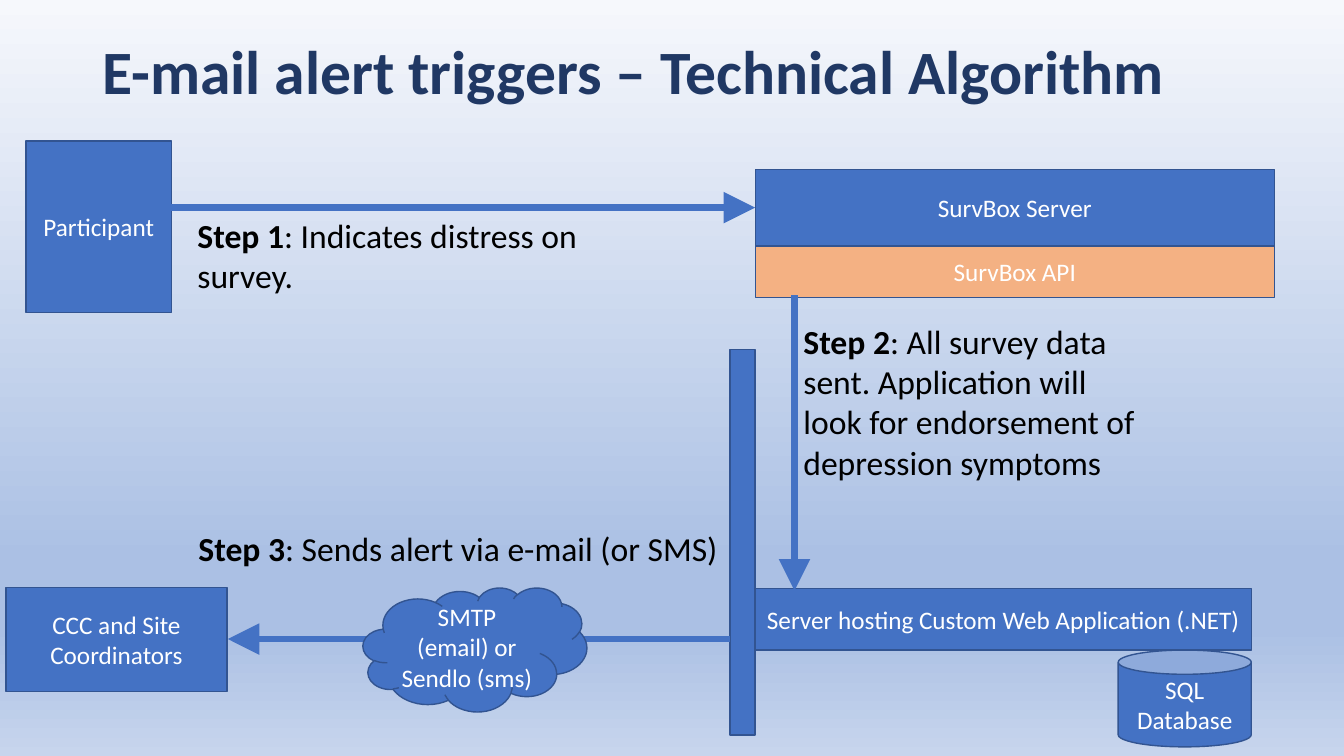
from lxml.etree import SubElement
from pptx import Presentation
from pptx.dml.color import RGBColor
from pptx.enum.shapes import MSO_CONNECTOR, MSO_SHAPE
from pptx.enum.text import MSO_ANCHOR, MSO_AUTO_SIZE, PP_ALIGN
from pptx.oxml.ns import qn
from pptx.util import Inches, Pt

BLUE = RGBColor(0x44, 0x72, 0xC4)
EDGE = RGBColor(0x32, 0x54, 0x91)
PEACH = RGBColor(0xF4, 0xB1, 0x83)
NAVY = RGBColor(0x20, 0x38, 0x64)
WHITE = RGBColor(0xFF, 0xFF, 0xFF)
BLACK = RGBColor(0, 0, 0)
SKY = [(0, "F6F8FC"), (74, "ABC0E4"), (83, "ABC0E4"), (100, "C7D5ED")]

TITLE = "E-mail alert triggers – Technical Algorithm"
RECT, CAN, CLOUD = MSO_SHAPE.RECTANGLE, MSO_SHAPE.CAN, MSO_SHAPE.CLOUD

# The server column starts where the wall ends
WALL, SERVER = 7.24, 7.49

# kind, (left, top, width, height), fill, lines of text
BOXES = [
    (RECT, (SERVER, 1.68, 5.15, 0.76), BLUE, ["SurvBox Server"]),
    (RECT, (SERVER, 2.44, 5.15, 0.51), PEACH, ["SurvBox API"]),
    (RECT, (SERVER, 5.84, 4.92, 0.61), BLUE,
     ["Server hosting Custom Web Application (.NET)"]),
    (RECT, (0.26, 1.4, 1.44, 1.7), BLUE, ["Participant"]),
    (CAN, (11.09, 6.45, 1.32, 0.96), BLUE, ["SQL Database"]),
    (RECT, (0.06, 5.83, 2.19, 1.03), BLUE, ["CCC and Site", "Coordinators"]),
    (RECT, (WALL, 3.47, SERVER - WALL, 3.82), BLUE, []),
]
RELAY = (CLOUD, (3.6, 5.83, 2.22, 1.23), BLUE,
         ["SMTP", "(email) or", "Sendlo (sms)"])

# start x, start y, end x, end y
ARROWS = [
    (1.7, 2.06, SERVER, 2.06),
    (7.88, 2.93, 7.88, 5.86),
    (WALL, 6.34, 2.26, 6.34),
]

STEPS = [
    ((1.86, 2.08, 4.96, 0.91), "Indicates distress on survey."),
    ((7.87, 3.13, 3.6, 1.72),
     "All survey data sent. Application will look for endorsement of "
     "depression symptoms"),
    ((1.87, 5.19, 5.52, 0.5), "Sends alert via e-mail (or SMS)"),
]


def style(item, **values):
    for name, value in values.items():
        setattr(item, name, value)


def write(para, text, size, color, bold=False):
    run = para.add_run()
    run.text = text
    style(run.font, name="Calibri", size=Pt(size), bold=bold)
    run.font.color.rgb = color


def paint(slide):
    """Fill the background with the top-down sky gradient."""
    fill = slide.background.fill
    fill.gradient()
    fill.gradient_angle = 270
    stops = slide.element.find(".//" + qn("a:gsLst"))
    for stop in list(stops):
        stops.remove(stop)
    for place, color in SKY:
        stop = SubElement(stops, qn("a:gs"), pos=str(place * 1000))
        SubElement(stop, qn("a:srgbClr"), val=color)


def add_box(slide, kind, place, fill, lines, inset=0.1):
    """Add a filled shape; inset is the space left and right of its text."""
    box = slide.shapes.add_shape(kind, *map(Inches, place))
    box.shadow.inherit = False
    box.fill.solid()
    box.fill.fore_color.rgb = fill
    box.line.color.rgb = EDGE
    box.line.width = Pt(1)
    frame = box.text_frame
    style(frame, word_wrap=True, vertical_anchor=MSO_ANCHOR.MIDDLE,
          margin_left=Inches(inset), margin_right=Inches(inset))
    for i, text in enumerate(lines):
        para = frame.add_paragraph() if i else frame.paragraphs[0]
        para.alignment = PP_ALIGN.CENTER
        write(para, text, 18, WHITE)


def add_arrow(slide, ends):
    arrow = slide.shapes.add_connector(MSO_CONNECTOR.STRAIGHT, *map(Inches, ends))
    arrow.line.color.rgb = BLUE
    arrow.line.width = Pt(4.5)
    SubElement(arrow.line._get_or_add_ln(), qn("a:tailEnd"),
               type="triangle", w="lg", len="lg")
    SubElement(arrow._element.spPr, qn("a:effectLst"))


def add_text(slide, place, **values):
    """Add a wrapped text box and return its first paragraph."""
    frame = slide.shapes.add_textbox(*map(Inches, place)).text_frame
    style(frame, word_wrap=True, **values)
    return frame.paragraphs[0]


def main():
    deck = Presentation()
    style(deck, slide_width=Inches(13.33), slide_height=Inches(7.5))
    slide = deck.slides.add_slide(deck.slide_layouts[6])
    paint(slide)

    head = add_text(slide, (0.92, 0.25, 11.5, 0.98),
                    vertical_anchor=MSO_ANCHOR.MIDDLE)
    head.line_spacing = 0.9
    write(head, TITLE, 44, NAVY, bold=True)

    for box in BOXES:
        add_box(slide, *box)
    for ends in ARROWS:
        add_arrow(slide, ends)
    for i, (place, text) in enumerate(STEPS, 1):
        para = add_text(slide, place, auto_size=MSO_AUTO_SIZE.SHAPE_TO_FIT_TEXT)
        write(para, f"Step {i}", 24, BLACK, bold=True)
        write(para, f": {text}", 24, BLACK)
    add_box(slide, *RELAY, inset=0)

    deck.save("out.pptx")


if __name__ == "__main__":
    main()
